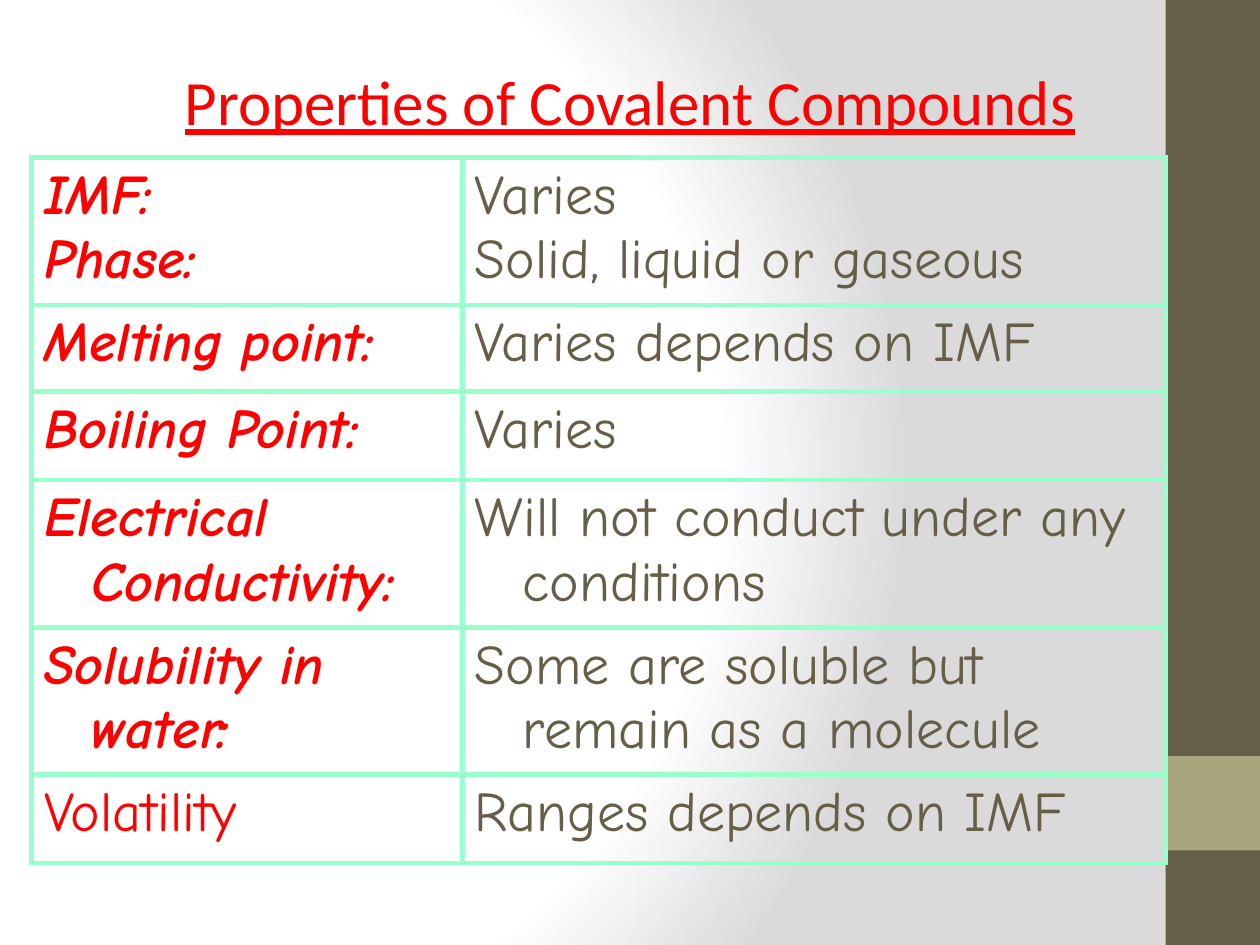
from lxml.etree import SubElement
from pptx import Presentation
from pptx.dml.color import RGBColor
from pptx.enum.shapes import MSO_SHAPE
from pptx.enum.text import MSO_ANCHOR, PP_ALIGN
from pptx.oxml import parse_xml
from pptx.oxml.ns import nsdecls, qn
from pptx.util import Pt

PX = 9144  # 100 px to the inch
COLORS = {"red": "FF0000", "brown": "675E47", "olive": "A9A57C",
          "mint": "99FFCC", "white": "FFFFFF", "grey": "DADADA"}


def style_run(run, font, size, color):
    run.font.name = font
    run.font.size = Pt(size)
    run.font.color.rgb = RGBColor.from_string(COLORS[color])


prs = Presentation()
prs.slide_width, prs.slide_height = 1000 * PX, 750 * PX
slide = prs.slides.add_slide(prs.slide_layouts[5])

# Background gradient
slide.background.fill.gradient()
gradient = slide.element.find(".//" + qn("a:gradFill"))
for part in list(gradient):
    gradient.remove(part)
stops = SubElement(gradient, qn("a:gsLst"))
for position, color in ((0, "white"), (75, "white"), (100, "grey")):
    stop = SubElement(stops, qn("a:gs"), pos=str(position * 1000))
    SubElement(stop, qn("a:srgbClr"), val=COLORS[color])
circle = SubElement(gradient, qn("a:path"), path="circle")
SubElement(circle, qn("a:fillToRect"), l="20000", t="50000", r="100000", b="50000")

# Side bar with its accent square
for top, height, color in ((0, 750, "brown"), (600, 75, "olive")):
    bar = slide.shapes.add_shape(MSO_SHAPE.RECTANGLE, 925 * PX, top * PX, 75 * PX, height * PX)
    bar.shadow.inherit = False
    bar.fill.solid()
    bar.fill.fore_color.rgb = RGBColor.from_string(COLORS[color])
    bar.line.fill.background()

# Title
title = slide.shapes.title
title.left, title.top, title.width, title.height = 75 * PX, 17 * PX, 850 * PX, 125 * PX
title.text_frame.text = "Properties of Covalent Compounds"
title.text_frame.vertical_anchor = MSO_ANCHOR.MIDDLE
heading = title.text_frame.paragraphs[0]
heading.alignment = PP_ALIGN.CENTER
style_run(heading.runs[0], "Calibri", 36, "red")
heading.runs[0].font.underline = True

# Properties table: row height, property, value
properties = [
    (117, "IMF:\nPhase:", "Varies\nSolid, liquid or gaseous"),
    (69, "Melting point:", "Varies depends on IMF"),
    (70, "Boiling Point:", "Varies"),
    (117, "Electrical Conductivity:", "Will not conduct under any conditions"),
    (117, "Solubility in water:", "Some are soluble but remain as a molecule"),
    (70, "Volatility", "Ranges depends on IMF"),
]
table = slide.shapes.add_table(len(properties), 2, 25 * PX, 125 * PX, 900 * PX, 560 * PX).table
table.first_row = table.horz_banding = False
for column, width in zip(table.columns, (342, 558)):
    column.width = width * PX

for row, (height, *texts) in zip(table.rows, properties):
    row.height = height * PX
    for cell, text, color in zip(row.cells, texts, ("red", "brown")):
        cell.fill.background()
        cell.text_frame.text = text
        emphasized = color == "red" and text.endswith(":")
        for paragraph in cell.text_frame.paragraphs:
            # Hanging indent
            indent = paragraph._p.get_or_add_pPr()
            indent.set("marL", str(38 * PX))
            indent.set("indent", str(-38 * PX))
            for run in paragraph.runs:
                style_run(run, "Comic Neue", 32, color)
                run.font.bold = run.font.italic = emphasized
        # Cell borders come before the fill
        for index, side in enumerate("LRTB"):
            cell._tc.get_or_add_tcPr().insert(index, parse_xml(
                f'<a:ln{side} {nsdecls("a")} w="{Pt(3)}"><a:solidFill>'
                f'<a:srgbClr val="{COLORS["mint"]}"/></a:solidFill></a:ln{side}>'))

prs.save("out.pptx")
